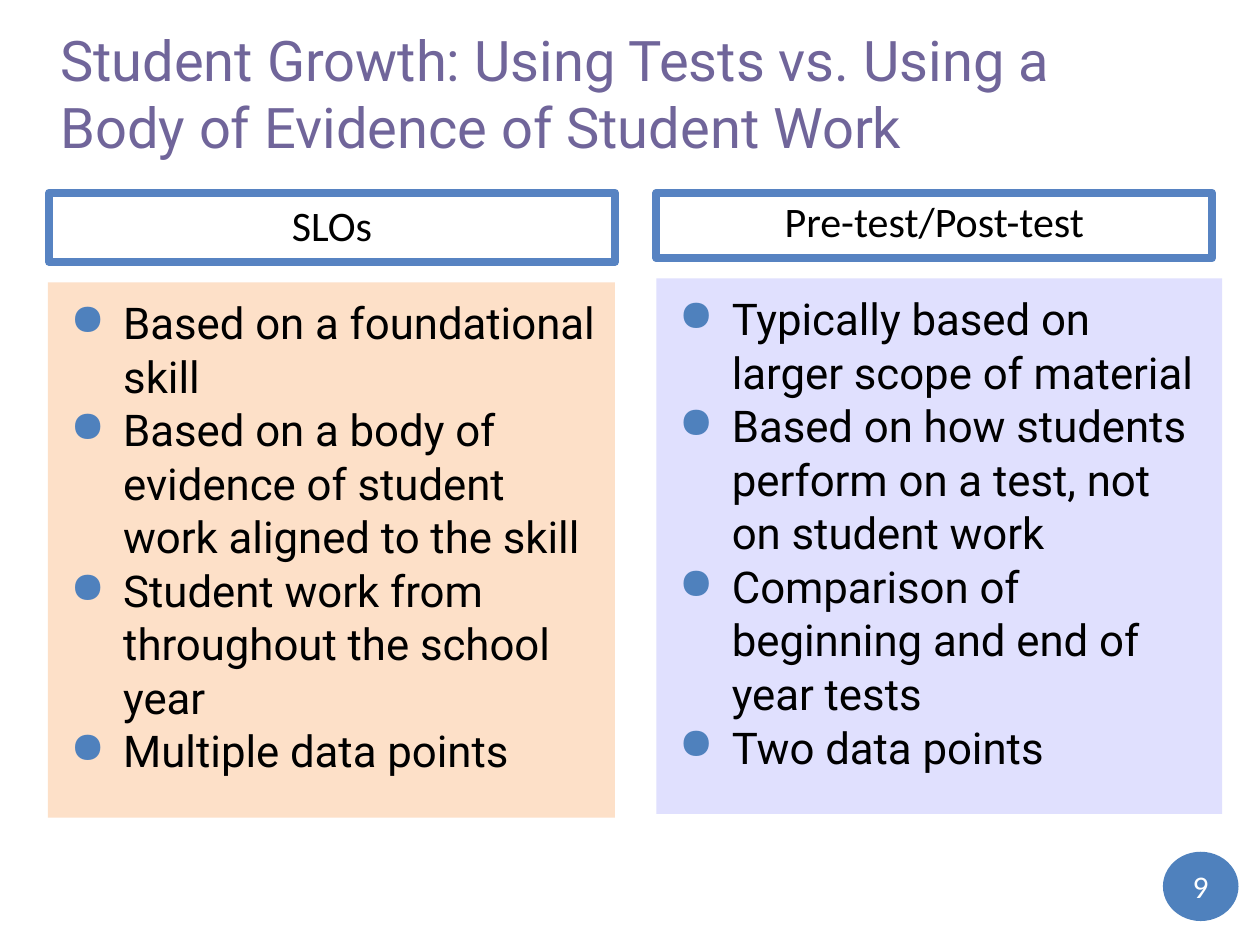
from dataclasses import dataclass

from lxml import etree
from pptx import Presentation
from pptx import util as u
from pptx.dml.color import RGBColor
from pptx.enum import shapes, text
from pptx.oxml.ns import qn


@dataclass(frozen=True)
class Theme:
    """Colours, fonts and type sizes of the slide."""
    heading: str = "70659A"
    ink: str = "000000"
    paper: str = "FFFFFF"
    frame: str = "5783C2"
    accent: str = "4F81BD"
    peach: str = "FDE0C8"
    lilac: str = "E0E0FE"
    main_font: str = "Roboto"
    label_font: str = "Calibri"
    title_size: int = 32
    label_size: int = 24
    body_size: int = 25
    number_size: int = 18
    frame_width: float = 4.5


class ComparisonSlide:
    """Holds the theme and current slide, and draws each kind of element."""

    def __init__(self, deck, theme):
        """Add a blank slide to the deck."""
        self.theme = theme
        self.width, self.height = deck.slide_width, deck.slide_height
        self.slide = deck.slides.add_slide(deck.slide_layouts[6])

    def place(self, x, y, w, h):
        """Turn shares of the slide's size into lengths."""
        return [u.Emu(round(share * side)) for share, side in
                zip((x, y, w, h), (self.width, self.height) * 2)]

    def set_text(self, shape, lines, font, size, colour, anchor, align, inset=0.1, bullet=None):
        """Fill a shape with paragraphs in one style."""
        frame = shape.text_frame
        margins = dict.fromkeys(("margin_left", "margin_right", "margin_top", "margin_bottom"),
                                u.Inches(inset))
        for name, value in {"word_wrap": True, "vertical_anchor": anchor, **margins}.items():
            setattr(frame, name, value)
        for index, line in enumerate(lines):
            paragraph = frame.add_paragraph() if index else frame.paragraphs[0]
            paragraph.alignment = align
            if bullet:
                self.add_bullet(paragraph, bullet)
            for name, value in {"name": font, "size": u.Pt(size)}.items():
                setattr(paragraph.font, name, value)
            paragraph.font.color.rgb = RGBColor.from_string(colour)
            paragraph.add_run().text = line

    def add_bullet(self, paragraph, colour):
        """Give a paragraph a hanging round bullet."""
        paragraph.line_spacing = 1.02
        properties = paragraph._p.get_or_add_pPr()
        for name, inches in {"marL": 0.5, "indent": -0.42}.items():
            properties.set(name, str(int(u.Inches(inches))))
        bullet_colour = etree.SubElement(properties, qn("a:buClr"))
        etree.SubElement(bullet_colour, qn("a:srgbClr"), val=colour)
        etree.SubElement(properties, qn("a:buChar"), char="●")

    def block(self, kind, area, fill=None, line=None):
        """Draw a flat shape with an optional fill and outline."""
        shape = self.slide.shapes.add_shape(kind, *self.place(*area))
        shape.shadow.inherit = False
        for part, colour in ((shape.fill, fill), (shape.line.fill, line)):
            if colour:
                part.solid()
                part.fore_color.rgb = RGBColor.from_string(colour)
            else:
                part.background()
        if line:
            shape.line.width = u.Pt(self.theme.frame_width)
        return shape

    def title(self, words, area):
        """Set the slide title."""
        box = self.slide.shapes.add_textbox(*self.place(*area))
        self.set_text(box, [words], self.theme.main_font, self.theme.title_size,
                      self.theme.heading, text.MSO_ANCHOR.BOTTOM, text.PP_ALIGN.LEFT)

    def label(self, words, area):
        """Draw a framed column heading."""
        box = self.block(shapes.MSO_SHAPE.RECTANGLE, area, line=self.theme.frame)
        self.set_text(box, [words], self.theme.label_font, self.theme.label_size,
                      self.theme.ink, text.MSO_ANCHOR.BOTTOM, text.PP_ALIGN.CENTER)

    def points(self, lines, area, fill):
        """Draw a tinted panel of bullet points."""
        panel = self.block(shapes.MSO_SHAPE.RECTANGLE, area, fill=fill)
        self.set_text(panel, lines, self.theme.main_font, self.theme.body_size, self.theme.ink,
                      text.MSO_ANCHOR.TOP, text.PP_ALIGN.LEFT, bullet=self.theme.accent)

    def page_number(self, number, area):
        """Draw the round page number."""
        badge = self.block(shapes.MSO_SHAPE.OVAL, area, fill=self.theme.accent)
        self.set_text(badge, [number], self.theme.label_font, self.theme.number_size,
                      self.theme.paper, text.MSO_ANCHOR.MIDDLE, text.PP_ALIGN.CENTER, inset=0)


def main():
    """Build the comparison slide."""
    deck = Presentation()
    deck.slide_width, deck.slide_height = u.Inches(10), u.Inches(7.5)
    theme = Theme()
    page = ComparisonSlide(deck, theme)
    page.title("Student Growth: Using Tests vs. Using a Body of Evidence of Student Work",
               (0.038, 0.14 / 7.5, 0.912, 1.23 / 7.5))
    label_top, panel_height = 1.53 / 7.5, 4.25 / 7.5
    columns = [
        ("SLOs", (0.039, label_top, 0.449, 0.55 / 7.5),
         (0.038, 2.24 / 7.5, 0.45, panel_height), theme.peach,
         ["Based on a foundational skill",
          "Based on a body of evidence of student work aligned to the skill",
          "Student work from throughout the school year",
          "Multiple data points"]),
        ("Pre-test/Post-test", (0.521, label_top, 0.441, 0.52 / 7.5),
         (0.521, 2.21 / 7.5, 0.449, panel_height), theme.lilac,
         ["Typically based on larger scope of material",
          "Based on how students perform on a test, not on student work",
          "Comparison of beginning and end of year tests",
          "Two data points"]),
    ]
    for heading, label_area, panel_area, tint, lines in columns:
        page.label(heading, label_area)
        page.points(lines, panel_area, tint)
    page.page_number("9", (0.923, 6.76 / 7.5, 0.06, 0.55 / 7.5))
    deck.save("out.pptx")


if __name__ == "__main__":
    main()
